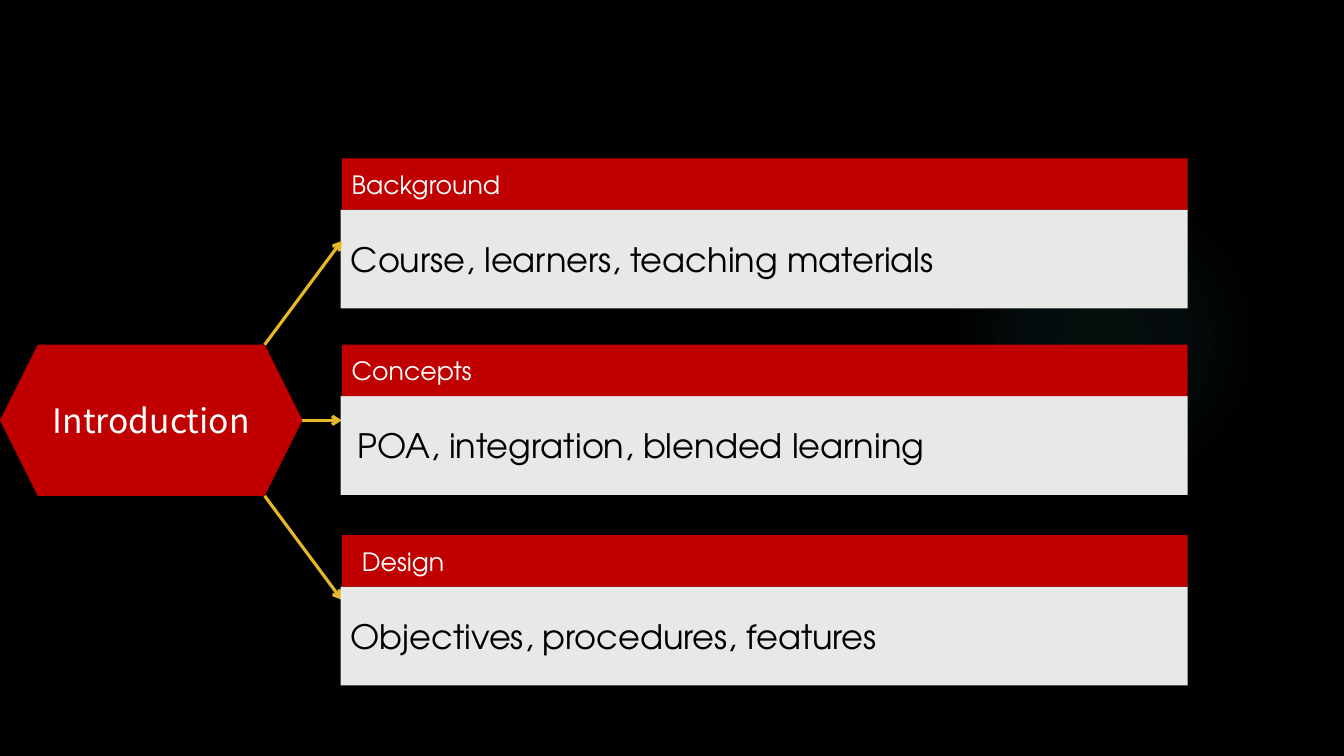
"""Build the introduction overview slide with three topic panels."""
import pptx
import pptx.dml.color
import pptx.enum.shapes
import pptx.enum.text
import pptx.oxml
import pptx.util
from lxml import etree

Inches = pptx.util.Inches
Shapes = pptx.enum.shapes.MSO_SHAPE
Align = pptx.enum.text.PP_ALIGN
DRAWING = "http://schemas.openxmlformats.org/drawingml/2006/main"

TOPIC_FONT = "TeX Gyre Adventor"
HUB_FONT = "Noto Sans CJK SC"
BLACK, WHITE, RED, GREY, GOLD, TEAL = "000000", "FFFFFF", "C00000", "E8E8E6", "E6B729", "50B9C1"

HUB = ("Introduction", 0, 3.42, 3, 1.5)
TOPICS = [
    {"top": 1.57, "title": "Background", "title_indent": 0,
     "detail": "Course, learners, teaching materials", "detail_indent": 0},
    {"top": 3.42, "title": "Concepts", "title_indent": 0,
     "detail": "POA, integration, blended learning", "detail_indent": 0.07},
    {"top": 5.31, "title": "Design", "title_indent": 0.1,
     "detail": "Objectives, procedures, features", "detail_indent": 0},
]
PANEL_LEFT, PANEL_WIDTH = 3.38, 8.4
TITLE_HEIGHT, DETAIL_HEIGHT = 0.51, 0.98
ARROW_END, ARROW_RISE = 3.39, 1.03
GLOW_BOX = (9.41, 1.83, 3.08, 3.08)
GLOW_STOPS = [(0, 7), (36, 6), (69, 0)]


def color(value):
    return pptx.dml.color.RGBColor.from_string(value)


def add_box(slide, kind, box, fill):
    shape = slide.shapes.add_shape(kind, *map(Inches, box))
    shape.shadow.inherit = False
    shape.line.fill.background()
    shape.fill.solid()
    shape.fill.fore_color.rgb = color(fill)
    return shape


def write(shape, text, size, font, ink, alignment=Align.LEFT, indent=0):
    frame = shape.text_frame
    frame.text = text
    frame.word_wrap = True
    frame.vertical_anchor = pptx.enum.text.MSO_ANCHOR.MIDDLE
    frame.margin_left = Inches(0.1 + indent)
    paragraph = frame.paragraphs[0]
    paragraph.alignment = alignment
    run_font = paragraph.runs[0].font
    run_font.size = pptx.util.Pt(size)
    run_font.name = font
    run_font.color.rgb = color(ink)


def add_glow(slide):
    glow = add_box(slide, Shapes.OVAL, GLOW_BOX, TEAL)
    stops = "".join(
        f'<a:gs pos="{position * 1000}"><a:srgbClr val="{TEAL}">'
        f'<a:alpha val="{opacity * 1000}"/></a:srgbClr></a:gs>'
        for position, opacity in GLOW_STOPS)
    gradient = pptx.oxml.parse_xml(
        f'<a:gradFill xmlns:a="{DRAWING}"><a:gsLst>{stops}</a:gsLst><a:path path="circle">'
        '<a:fillToRect l="50000" t="50000" r="50000" b="50000"/></a:path></a:gradFill>')
    properties = glow.element.spPr
    properties.replace(properties.find(f"{{{DRAWING}}}solidFill"), gradient)


def add_arrow(slide, start, end):
    arrow = slide.shapes.add_connector(
        pptx.enum.shapes.MSO_CONNECTOR.STRAIGHT, *map(Inches, start + end))
    arrow.line.color.rgb = color(GOLD)
    arrow.line.width = pptx.util.Pt(2.25)
    properties = arrow.element.spPr
    line = properties.find(f"{{{DRAWING}}}ln")
    etree.SubElement(line, f"{{{DRAWING}}}tailEnd", type="arrow")
    etree.SubElement(properties, f"{{{DRAWING}}}effectLst")


def add_hub(slide):
    text, left, top, width, height = HUB
    hub = add_box(slide, Shapes.HEXAGON, (left, top, width, height), RED)
    write(hub, text, 24, HUB_FONT, WHITE, Align.CENTER)
    right, bottom, middle = left + width, top + height, top + height / 2
    corner = right - height / 4
    add_arrow(slide, (corner, top), (ARROW_END, top - ARROW_RISE))
    add_arrow(slide, (right, middle), (ARROW_END, middle))
    add_arrow(slide, (corner, bottom), (ARROW_END, bottom + ARROW_RISE))


def add_topic(slide, topic):
    detail_box = (PANEL_LEFT, topic["top"] + TITLE_HEIGHT, PANEL_WIDTH, DETAIL_HEIGHT)
    detail = add_box(slide, Shapes.RECTANGLE, detail_box, GREY)
    write(detail, topic["detail"], 24, TOPIC_FONT, BLACK, indent=topic["detail_indent"])
    title_box = (PANEL_LEFT + 0.01, topic["top"], PANEL_WIDTH - 0.01, TITLE_HEIGHT)
    title = add_box(slide, Shapes.RECTANGLE, title_box, RED)
    write(title, topic["title"], 18, TOPIC_FONT, WHITE, indent=topic["title_indent"])


def main():
    presentation = pptx.Presentation()
    presentation.slide_width = Inches(13.33)
    presentation.slide_height = Inches(7.5)
    slide = presentation.slides.add_slide(presentation.slide_layouts[6])
    slide.background.fill.solid()
    slide.background.fill.fore_color.rgb = color(BLACK)
    add_glow(slide)
    add_topic(slide, TOPICS[0])
    add_hub(slide)
    for topic in TOPICS[1:]:
        add_topic(slide, topic)
    presentation.save("out.pptx")


if __name__ == "__main__":
    main()
